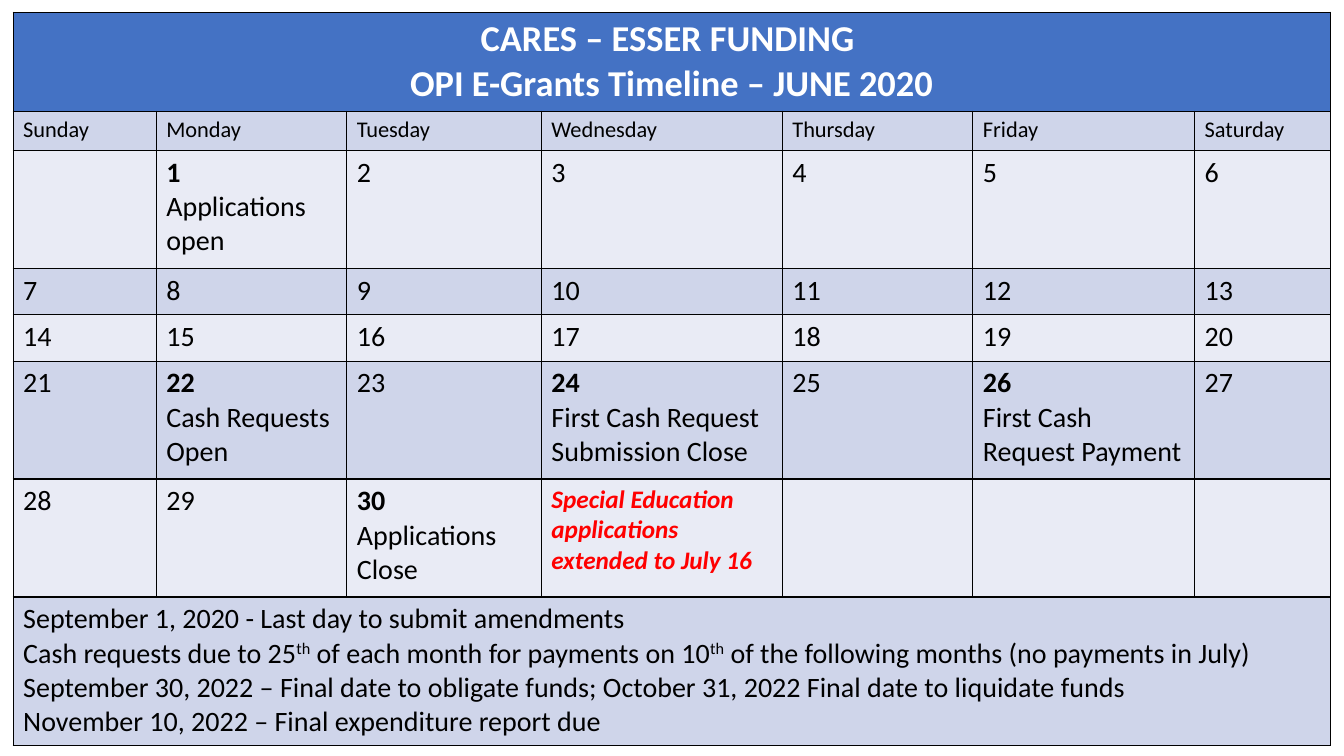
from dataclasses import dataclass

from lxml.etree import SubElement
from pptx import Presentation
from pptx.dml.color import RGBColor
from pptx.enum.text import PP_ALIGN
from pptx.oxml.ns import qn
from pptx.util import Inches, Pt


@dataclass(frozen=True)
class Theme:
    """Colours, font and type sizes of the calendar."""
    font: str = "Calibri"
    header: str = "4472C4"
    bands: tuple = ("E9EBF5", "CFD5EA")
    border: str = "000000"
    ink: str = "000000"
    white: str = "FFFFFF"
    alert: str = "FF0000"
    title_size: int = 26
    day_size: int = 20
    alert_size: int = 18
    weekday_size: int = 16


THEME = Theme()
COLUMNS = [1.42, 1.89, 1.93, 2.39, 1.89, 2.2, 1.35]
ROWS = [0.98, 0.39, 1.17, 0.46, 0.46, 1.17, 1.17, 1.47]
WEEKDAYS = ["Sunday", "Monday", "Tuesday", "Wednesday", "Thursday", "Friday", "Saturday"]
TITLE = ["CARES – ESSER FUNDING ", "OPI E-Grants Timeline – JUNE 2020"]
LAST_DAY = 30
EVENTS = {
    1: ["Applications open"],
    22: ["Cash Requests Open"],
    24: ["First Cash Request Submission Close"],
    26: ["First Cash", "Request Payment"],
    30: ["Applications Close"],
}
EXTENSION = "Special Education applications extended to July 16"
DEADLINES = [
    "September 1, 2020 - Last day to submit amendments",
    "Cash requests due to 25^th^ of each month for payments on 10^th^ of the following "
    "months (no payments in July)",
    "September 30, 2022 – Final date to obligate funds; October 31, 2022 Final date to "
    "liquidate funds",
    "November 10, 2022 – Final expenditure report due",
]


def write(cell, text, size=THEME.day_size, color=THEME.ink, bold=False, italic=False,
          align=PP_ALIGN.LEFT):
    """Add text as a paragraph of the cell, raising what stands between carets."""
    frame = cell.text_frame
    para = frame.add_paragraph() if frame.text else frame.paragraphs[0]
    para.alignment = align
    for index, part in enumerate(text.split("^")):
        span = para.add_run()
        span.text = part
        font = span.font
        font.name, font.size = THEME.font, Pt(size)
        font.bold, font.italic = bold, italic
        font.color.rgb = RGBColor.from_string(color)
        if index % 2:
            span._r.get_or_add_rPr().set("baseline", "30000")


def style_cell(cell, color):
    """Fill the cell and draw a thin line on its four sides."""
    cell.fill.solid()
    cell.fill.fore_color.rgb = RGBColor.from_string(color)
    properties = cell._tc.get_or_add_tcPr()
    for index, side in enumerate(("lnL", "lnR", "lnT", "lnB")):
        line = SubElement(properties, qn(f"a:{side}"), w=str(Pt(1)))
        fill = SubElement(line, qn("a:solidFill"))
        SubElement(fill, qn("a:srgbClr"), val=THEME.border)
        properties.insert(index, line)


def add_grid(page, left, top):
    """Add the empty banded table and return it."""
    table = page.shapes.add_table(len(ROWS), len(COLUMNS), Inches(left), Inches(top),
                                  Inches(sum(COLUMNS)), Inches(sum(ROWS))).table
    for column, width in zip(table.columns, COLUMNS):
        column.width = Inches(width)
    for index, (row, height) in enumerate(zip(table.rows, ROWS)):
        row.height = Inches(height)
        for cell in row.cells:
            style_cell(cell, THEME.bands[index % 2] if index else THEME.header)
    return table


def merge_row(table, row):
    """Merge a whole row and return its cell."""
    cell = table.cell(row, 0)
    cell.merge(table.cell(row, len(COLUMNS) - 1))
    return cell


def fill_heading(table):
    """Write the title row and the weekday row."""
    title = merge_row(table, 0)
    for line in TITLE:
        write(title, line, size=THEME.title_size, color=THEME.white, bold=True,
              align=PP_ALIGN.CENTER)
    for column, weekday in enumerate(WEEKDAYS):
        write(table.cell(1, column), weekday, size=THEME.weekday_size)


def fill_month(table, first_row=2, first_column=1):
    """Write the days with their events, then the extension note."""
    for day in range(1, LAST_DAY + 1):
        week, weekday = divmod(day - 1 + first_column, len(WEEKDAYS))
        cell = table.cell(first_row + week, weekday)
        write(cell, str(day), bold=day in EVENTS)
        for line in EVENTS.get(day, []):
            write(cell, line)
    write(table.cell(first_row + week, weekday + 1), EXTENSION, size=THEME.alert_size,
          color=THEME.alert, bold=True, italic=True)


def fill_deadlines(table):
    """Write the later deadlines across the last row."""
    footer = merge_row(table, len(ROWS) - 1)
    for line in DEADLINES:
        write(footer, line)


def main():
    """Build the calendar slide and save it."""
    deck = Presentation()
    deck.slide_width, deck.slide_height = Inches(13.33), Inches(7.5)
    page = deck.slides.add_slide(deck.slide_layouts[6])
    table = add_grid(page, 0.13, 0.12)
    fill_heading(table)
    fill_month(table)
    fill_deadlines(table)
    deck.save("out.pptx")


if __name__ == "__main__":
    main()
